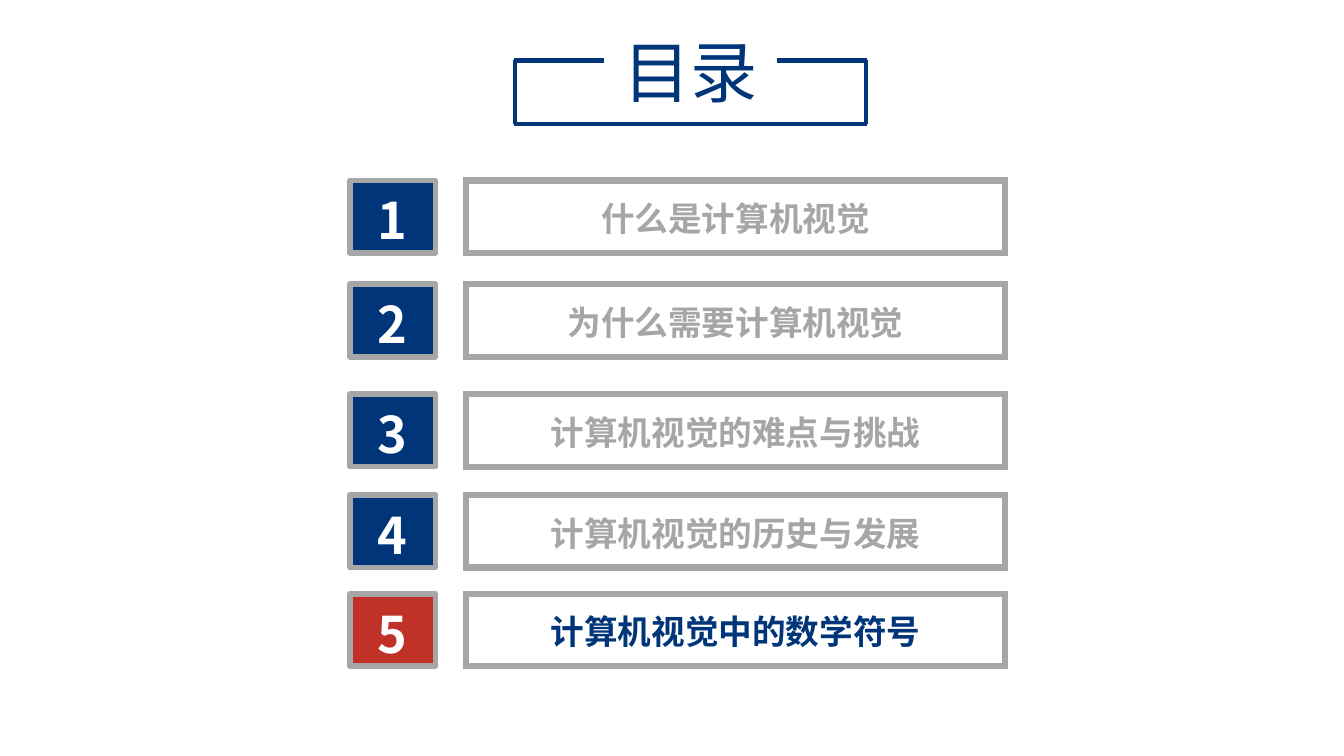
from dataclasses import dataclass
from typing import NamedTuple

from lxml.etree import SubElement
from pptx import Presentation
from pptx.dml.color import RGBColor
from pptx.enum.shapes import MSO_CONNECTOR, MSO_SHAPE
from pptx.enum.text import MSO_ANCHOR, PP_ALIGN
from pptx.oxml.ns import qn
from pptx.shapes.autoshape import Shape
from pptx.shapes.shapetree import GroupShapes, SlideShapes
from pptx.util import Inches, Pt


@dataclass(frozen=True)
class Theme:
    font: str = "Noto Sans CJK SC"
    navy: RGBColor = RGBColor(0x00, 0x36, 0x79)
    red: RGBColor = RGBColor(0xC0, 0x32, 0x28)
    grey: RGBColor = RGBColor(0xA6, 0xA6, 0xA6)
    white: RGBColor = RGBColor(0xFF, 0xFF, 0xFF)
    title_size: float = 48
    number_size: float = 36
    topic_size: float = 24
    bracket_width: float = 3
    badge_border: float = 4
    frame_border: float = 4.5


class Box(NamedTuple):
    left: float
    top: float
    width: float
    height: float


class Segment(NamedTuple):
    x1: float
    y1: float
    x2: float
    y2: float


class Topic(NamedTuple):
    top: float
    text: str
    current: bool = False


THEME = Theme()
TITLE_BOX = Box(5.83, 0.25, 2.04, 0.91)
BRACKET = [
    Segment(7.71, 0.6, 8.6, 0.6),
    Segment(5.1, 0.6, 5.99, 0.6),
    Segment(5.1, 1.23, 8.6, 1.23),
    Segment(5.11, 0.6, 5.11, 1.23),
    Segment(8.59, 0.6, 8.59, 1.23),
]
TOPICS = [
    Topic(1.79, "什么是计算机视觉"),
    Topic(2.82, "为什么需要计算机视觉"),
    Topic(3.91, "计算机视觉的难点与挑战"),
    Topic(4.91, "计算机视觉的历史与发展"),
    Topic(5.89, "计算机视觉中的数学符号", current=True),
]
BADGE_LEFT, BADGE_WIDTH = 3.47, 0.85
FRAME_LEFT, FRAME_WIDTH = 4.62, 5.35
ROW_HEIGHT = 0.72
LABEL_OFFSET, LABEL_HEIGHT = 0.1, 0.51


def write(shape: Shape, text: str, size: float, color: RGBColor,
          bold: bool = True, spacing: float = 1.1) -> None:
    frame = shape.text_frame
    frame.word_wrap = True
    frame.vertical_anchor = MSO_ANCHOR.MIDDLE
    paragraph = frame.paragraphs[0]
    paragraph.alignment = PP_ALIGN.CENTER
    paragraph.line_spacing = spacing
    run = paragraph.add_run()
    run.text = text
    font = paragraph.font
    font.name, font.size, font.bold = THEME.font, Pt(size), bold
    font.color.rgb = color
    # Chinese glyphs take their typeface from the East Asian slot
    SubElement(run._r.get_or_add_rPr(), qn("a:ea")).set("typeface", THEME.font)


def add_text(shapes: SlideShapes | GroupShapes, box: Box) -> Shape:
    return shapes.add_textbox(*map(Inches, box))


def add_box(shapes: SlideShapes | GroupShapes, box: Box, border: float) -> Shape:
    shape = shapes.add_shape(MSO_SHAPE.RECTANGLE, *map(Inches, box))
    shape.shadow.inherit = False
    shape.line.color.rgb = THEME.grey
    shape.line.width = Pt(border)
    return shape


def add_bracket_line(shapes: GroupShapes, segment: Segment) -> None:
    line = shapes.add_connector(MSO_CONNECTOR.STRAIGHT, *map(Inches, segment))
    line.line.color.rgb = THEME.navy
    line.line.width = Pt(THEME.bracket_width)
    SubElement(line._element.spPr, qn("a:effectLst"))


def add_title(shapes: SlideShapes) -> None:
    group = shapes.add_group_shape().shapes
    write(add_text(group, TITLE_BOX), "目录", THEME.title_size, THEME.navy,
          bold=False, spacing=1.0)
    for segment in BRACKET:
        add_bracket_line(group, segment)


def add_topic(shapes: SlideShapes, number: int, topic: Topic) -> None:
    badge = add_box(shapes, Box(BADGE_LEFT, topic.top, BADGE_WIDTH, ROW_HEIGHT),
                    THEME.badge_border)
    badge.fill.solid()
    badge.fill.fore_color.rgb = THEME.red if topic.current else THEME.navy
    write(badge, str(number), THEME.number_size, THEME.white)

    group = shapes.add_group_shape().shapes
    frame = add_box(group, Box(FRAME_LEFT, topic.top, FRAME_WIDTH, ROW_HEIGHT),
                    THEME.frame_border)
    frame.fill.background()
    outline = frame._element.spPr.find(qn("a:ln"))
    SubElement(outline, qn("a:miter")).set("lim", "800000")
    label = add_text(group, Box(FRAME_LEFT, topic.top + LABEL_OFFSET,
                                FRAME_WIDTH, LABEL_HEIGHT))
    write(label, topic.text, THEME.topic_size,
          THEME.navy if topic.current else THEME.grey)


def main() -> None:
    presentation = Presentation()
    presentation.slide_width = Inches(13.33)
    presentation.slide_height = Inches(7.5)
    slide = presentation.slides.add_slide(presentation.slide_layouts[6])
    add_title(slide.shapes)
    for number, topic in enumerate(TOPICS, start=1):
        add_topic(slide.shapes, number, topic)
    presentation.save("out.pptx")


if __name__ == "__main__":
    main()
